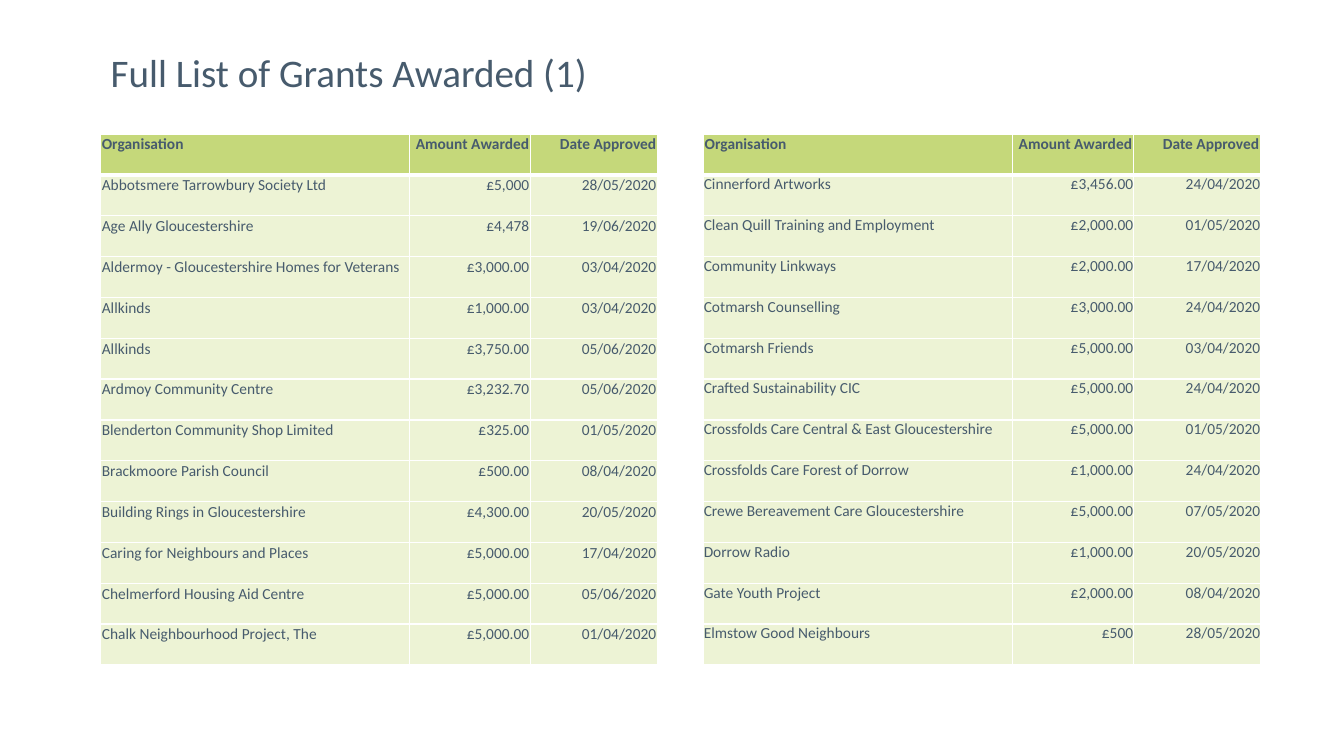
from lxml.etree import SubElement
from pptx import Presentation
from pptx.dml.color import RGBColor
from pptx.enum.text import MSO_ANCHOR, PP_ALIGN
from pptx.oxml.ns import qn
from pptx.util import Inches, Pt

COLORS = {"text": "475B6D", "header": "C5D87A", "body": "EDF3D5", "border": "FFFFFF"}
HEADER = ("Organisation", "Amount Awarded", "Date Approved")
COL_WIDTHS = (3.06, 1.2, 1.26)
TABLE_HEIGHT = 5.27

GRANTS_LEFT = [
    ("Abbotsmere Tarrowbury Society Ltd", "£5,000", "28/05/2020"),
    ("Age Ally Gloucestershire", "£4,478", "19/06/2020"),
    ("Aldermoy - Gloucestershire Homes for Veterans", "£3,000.00", "03/04/2020"),
    ("Allkinds", "£1,000.00", "03/04/2020"),
    ("Allkinds", "£3,750.00", "05/06/2020"),
    ("Ardmoy Community Centre", "£3,232.70", "05/06/2020"),
    ("Blenderton Community Shop Limited", "£325.00", "01/05/2020"),
    ("Brackmoore Parish Council", "£500.00", "08/04/2020"),
    ("Building Rings in Gloucestershire", "£4,300.00", "20/05/2020"),
    ("Caring for Neighbours and Places", "£5,000.00", "17/04/2020"),
    ("Chelmerford Housing Aid Centre", "£5,000.00", "05/06/2020"),
    ("Chalk Neighbourhood Project, The", "£5,000.00", "01/04/2020"),
]
GRANTS_RIGHT = [
    ("Cinnerford Artworks", "£3,456.00", "24/04/2020"),
    ("Clean Quill Training and Employment", "£2,000.00", "01/05/2020"),
    ("Community Linkways", "£2,000.00", "17/04/2020"),
    ("Cotmarsh Counselling", "£3,000.00", "24/04/2020"),
    ("Cotmarsh Friends", "£5,000.00", "03/04/2020"),
    ("Crafted Sustainability CIC", "£5,000.00", "24/04/2020"),
    ("Crossfolds Care Central & East Gloucestershire", "£5,000.00", "01/05/2020"),
    ("Crossfolds Care Forest of Dorrow", "£1,000.00", "24/04/2020"),
    ("Crewe Bereavement Care Gloucestershire", "£5,000.00", "07/05/2020"),
    ("Dorrow Radio", "£1,000.00", "20/05/2020"),
    ("Gate Youth Project", "£2,000.00", "08/04/2020"),
    ("Elmstow Good Neighbours", "£500", "28/05/2020"),
]


def write(tf, text, size=11, bold=False, align=PP_ALIGN.LEFT):
    p = tf.paragraphs[0]
    p.alignment = align
    r = p.add_run()
    r.text = text
    r.font.name = "Calibri"
    r.font.size = Pt(size)
    r.font.bold = bold
    r.font.color.rgb = RGBColor.from_string(COLORS["text"])


def add_border(cell, side, width):
    ln = SubElement(cell._tc.get_or_add_tcPr(), qn(f"a:{side}"), w=str(Pt(width)))
    fill = SubElement(ln, qn("a:solidFill"))
    SubElement(fill, qn("a:srgbClr"), val=COLORS["border"])


prs = Presentation()
prs.slide_width = Inches(13.33)
prs.slide_height = Inches(7.5)
s = prs.slides.add_slide(prs.slide_layouts[6])

title = s.shapes.add_textbox(Inches(1), Inches(0.41), Inches(11.5), Inches(0.74))
tf = title.text_frame
tf.word_wrap = True
tf.vertical_anchor = MSO_ANCHOR.MIDDLE
tf.margin_bottom = Inches(0.19)
write(tf, "Full List of Grants Awarded (1)", size=27.9)

for left, grants, body_inset in ((1, GRANTS_LEFT, 0.01), (6.98, GRANTS_RIGHT, 0)):
    rows = [HEADER] + grants
    table = s.shapes.add_table(
        len(rows), len(HEADER), Inches(left), Inches(1.33),
        Inches(sum(COL_WIDTHS)), Inches(TABLE_HEIGHT)).table
    table.horz_banding = False
    for column, width in zip(table.columns, COL_WIDTHS):
        column.width = Inches(width)
    for i, row in enumerate(rows):
        table.rows[i].height = Inches(TABLE_HEIGHT / len(rows))
        is_header = i == 0
        inset = Inches(0.01 if is_header else body_inset)
        for j, text in enumerate(row):
            cell = table.cell(i, j)
            cell.margin_left = cell.margin_right = cell.margin_top = inset
            cell.margin_bottom = 0
            cell.vertical_anchor = MSO_ANCHOR.TOP
            add_border(cell, "lnL", 1)
            add_border(cell, "lnR", 1)
            add_border(cell, "lnT", 3 if i == 1 else 1)
            add_border(cell, "lnB", 3 if is_header else 1)
            cell.fill.solid()
            cell.fill.fore_color.rgb = RGBColor.from_string(
                COLORS["header" if is_header else "body"])
            write(cell.text_frame, text, bold=is_header,
                  align=PP_ALIGN.RIGHT if j else PP_ALIGN.LEFT)

prs.save("out.pptx")
